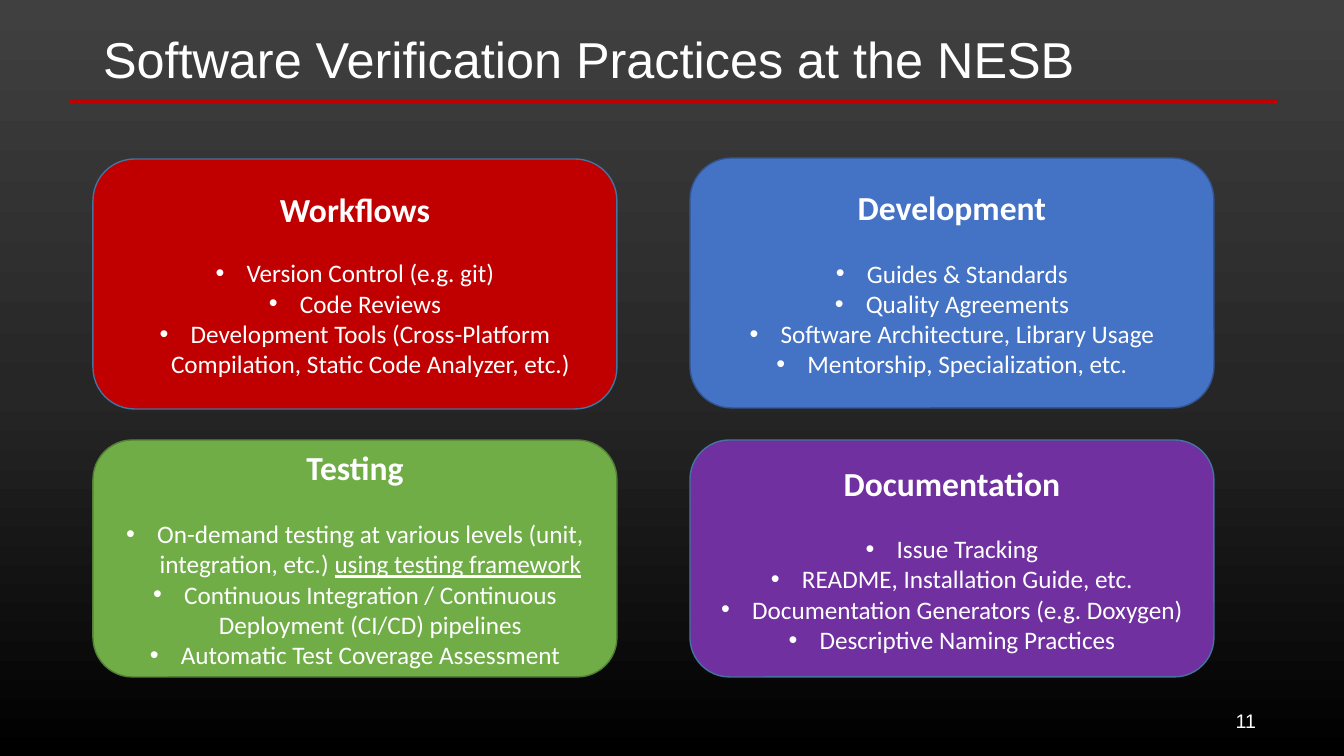
"""Build the slide on software verification practices."""
import copy

import lxml.etree
import pptx
import pptx.dml.color
import pptx.enum.shapes
import pptx.enum.text
import pptx.oxml.ns
import pptx.util

RGB = pptx.dml.color.RGBColor
WHITE = RGB(255, 255, 255)
RED = RGB(0xC0, 0, 0)
BLUE = RGB(0x44, 0x72, 0xC4)
GREEN = RGB(0x70, 0xAD, 0x47)
PURPLE = RGB(0x70, 0x30, 0xA0)
EDGE_TEAL = RGB(0x43, 0x73, 0x9E)
EDGE_BLUE = RGB(0x32, 0x54, 0x91)
EDGE_GREEN = RGB(0x53, 0x80, 0x35)
BACKDROP = [(0, RGB(0, 0, 0)), (0.48, RGB(0x26, 0x26, 0x26)), (1, RGB(0x40, 0x40, 0x40))]

TITLE = "Software Verification Practices at the NESB"
PAGE = "11"
CARDS = [
    dict(heading="Workflows", col=0, top=159, height=250, fill=RED, edge=EDGE_TEAL, gap=20, items=[
        ["Version Control (e.g. git)"],
        ["Code Reviews"],
        ["Development Tools (Cross-Platform Compilation, Static Code Analyzer, etc.)"]]),
    dict(heading="Testing", col=0, top=440, height=237, fill=GREEN, edge=EDGE_GREEN, gap=22, items=[
        ["On-demand testing at various levels (unit, integration, etc.) ", "using testing framework"],
        ["Continuous Integration / Continuous Deployment (CI/CD) pipelines"],
        ["Automatic Test Coverage Assessment"]]),
    dict(heading="Documentation", col=1, top=440, height=237, fill=PURPLE, edge=EDGE_TEAL, gap=22, items=[
        ["Issue Tracking"],
        ["README, Installation Guide, etc."],
        ["Documentation Generators (e.g. Doxygen)"],
        ["Descriptive Naming Practices"]]),
    dict(heading="Development", col=1, top=158, height=250, fill=BLUE, edge=EDGE_BLUE, gap=22, items=[
        ["Guides & Standards"],
        ["Quality Agreements"],
        ["Software Architecture, Library Usage"],
        ["Mentorship, Specialization, etc."]]),
]
CARD_LEFT, CARD_PITCH, CARD_WIDTH, BULLET_INDENT = 93, 597, 524, 31


def px(n):
    """Turn pixels into EMU."""
    return pptx.util.Emu(round(n * 914400 / 100.8))


def add_run(p, text, size, font="Calibri", bold=False, underline=False):
    """Add one white run to a paragraph."""
    r = p.add_run()
    r.text = text
    r.font.name = font
    r.font.size = pptx.util.Pt(size)
    r.font.bold = bold
    r.font.underline = underline
    r.font.color.rgb = WHITE


def add_bullet(p):
    """Give a paragraph a hanging round bullet."""
    pPr = p._p.get_or_add_pPr()
    pPr.set("marL", str(px(BULLET_INDENT)))
    pPr.set("indent", str(-px(BULLET_INDENT)))
    qn = pptx.oxml.ns.qn
    lxml.etree.SubElement(pPr, qn("a:buFont")).set("typeface", "Arial")
    lxml.etree.SubElement(pPr, qn("a:buChar")).set("char", "•")


def set_background(s):
    """Fill the slide with a vertical gradient."""
    fill = s.background.fill
    fill.gradient()
    fill.gradient_angle = 90
    stops = s.element.find(".//" + pptx.oxml.ns.qn("a:gsLst"))
    stops.append(copy.deepcopy(stops[0]))
    for stop, (position, color) in zip(fill.gradient_stops, BACKDROP):
        stop.position = position
        stop.color.rgb = color


def add_title(s):
    """Place the title and the rule under it."""
    title = s.shapes.title
    title.left, title.top, title.width, title.height = px(93), px(31), px(1159), px(62)
    tf = title.text_frame
    tf.auto_size = pptx.enum.text.MSO_AUTO_SIZE.NONE
    tf.vertical_anchor = pptx.enum.text.MSO_ANCHOR.MIDDLE
    p = tf.paragraphs[0]
    p.alignment = pptx.enum.text.PP_ALIGN.LEFT
    p.line_spacing = 0.9
    add_run(p, TITLE, 36, "Arial")
    rule = s.shapes.add_connector(
        pptx.enum.shapes.MSO_CONNECTOR.STRAIGHT, px(69), px(101), px(1278), px(101))
    rule.line.color.rgb = RED
    rule.line.width = pptx.util.Pt(3)
    lxml.etree.SubElement(rule._element.spPr, pptx.oxml.ns.qn("a:effectLst"))


def add_card(s, card):
    """Add one rounded card with its heading and bullets."""
    sp = s.shapes.add_shape(
        pptx.enum.shapes.MSO_SHAPE.ROUNDED_RECTANGLE,
        px(CARD_LEFT + card["col"] * CARD_PITCH), px(card["top"]),
        px(CARD_WIDTH), px(card["height"]))
    sp.shadow.inherit = False
    sp.fill.solid()
    sp.fill.fore_color.rgb = card["fill"]
    sp.line.color.rgb = card["edge"]
    sp.line.width = pptx.util.Pt(1)
    tf = sp.text_frame
    tf.word_wrap = True
    tf.vertical_anchor = pptx.enum.text.MSO_ANCHOR.MIDDLE
    p = tf.paragraphs[0]
    p.alignment = pptx.enum.text.PP_ALIGN.CENTER
    p.space_after = pptx.util.Pt(card["gap"])
    add_run(p, card["heading"], 24, bold=True)
    for item in card["items"]:
        p = tf.add_paragraph()
        p.alignment = pptx.enum.text.PP_ALIGN.CENTER
        add_bullet(p)
        for i, text in enumerate(item):
            add_run(p, text, 18, underline=i > 0)


def add_page_number(s):
    """Add the page number at the lower right."""
    tf = s.shapes.add_textbox(px(1214), px(701), px(52), px(40)).text_frame
    tf.word_wrap = True
    tf.vertical_anchor = pptx.enum.text.MSO_ANCHOR.MIDDLE
    p = tf.paragraphs[0]
    p.alignment = pptx.enum.text.PP_ALIGN.RIGHT
    add_run(p, PAGE, 14, "Arial")


def main():
    """Build and save the presentation."""
    prs = pptx.Presentation()
    prs.slide_width, prs.slide_height = px(1344), px(756)
    s = prs.slides.add_slide(prs.slide_layouts[5])
    set_background(s)
    add_title(s)
    for card in CARDS:
        add_card(s, card)
    add_page_number(s)
    prs.save("out.pptx")


if __name__ == "__main__":
    main()
